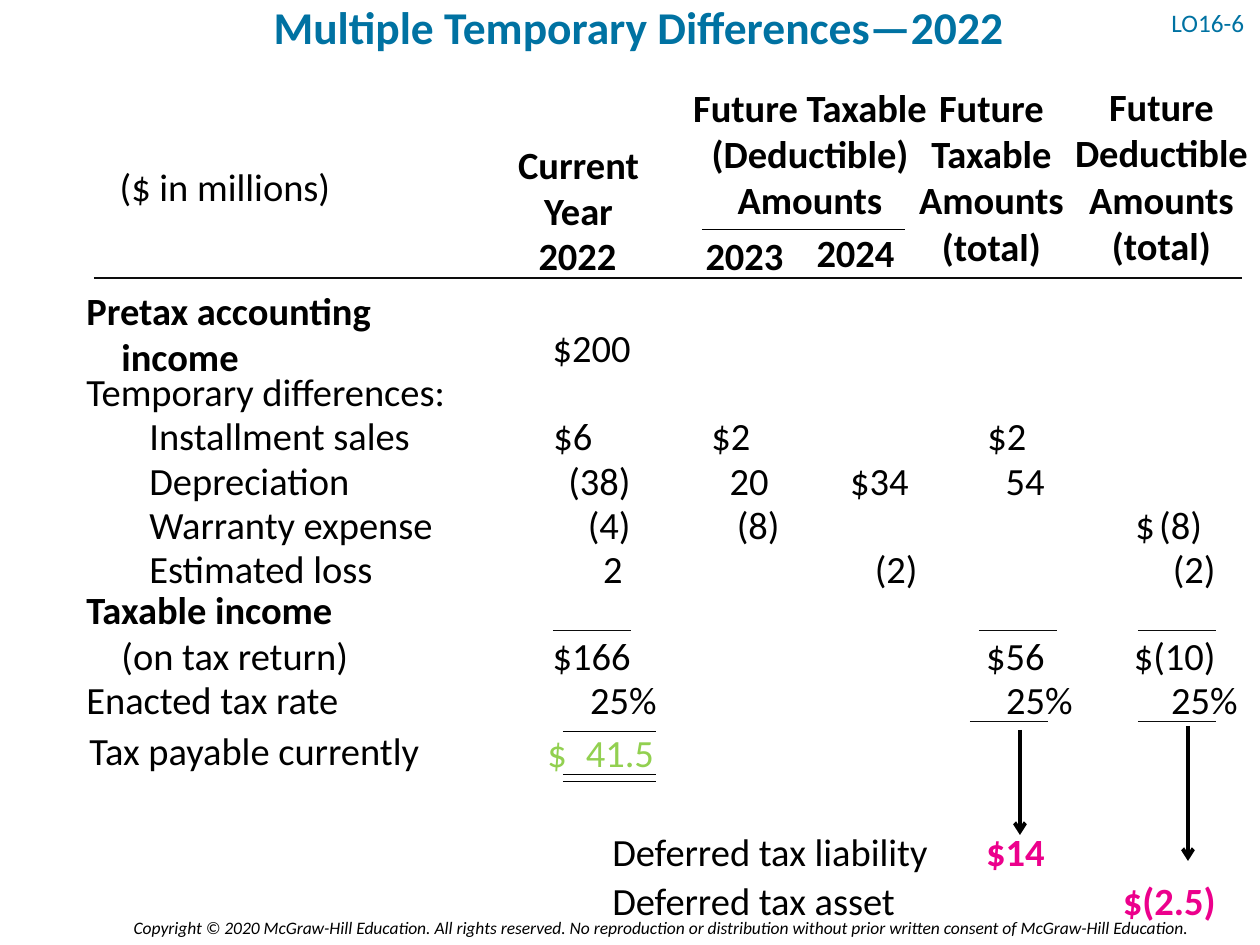
from pptx import Presentation
from pptx.dml.color import RGBColor
from pptx.enum.shapes import MSO_CONNECTOR
from pptx.enum.text import MSO_ANCHOR as ANCHOR, MSO_AUTO_SIZE as AUTO, PP_ALIGN as ALIGN
from pptx.oxml.ns import qn
from pptx.util import Emu, Pt
from lxml.etree import SubElement

PX = 914400 // 126
FONT = "Calibri"
BLACK, RULE, BLUE, GREEN, PINK = "000000", "0D0D0D", "0072A2", "92D050", "EC008C"
ROW_H, AMOUNT_W = 59, 131

# Left edges of the amount columns
CURRENT, Y2023, Y2024, TAXABLE, DEDUCTIBLE = 512, 650, 790, 926, 1097
# Tops of the rows
PRETAX, SALES, DEPRECIATION, WARRANTY, LOSS = 318, 406, 451, 495, 539
INCOME, RATE, PAYABLE, LIABILITY, ASSET = 626, 670, 723, 822, 871

LABELS = [  # text, left, top, width, indent
    ("Temporary differences:", 74, 362, 407, 0),
    ("Installment sales", 74, SALES, 407, 63),
    ("Depreciation", 74, DEPRECIATION, 407, 63),
    ("Warranty expense", 74, WARRANTY, 407, 63),
    ("Estimated loss", 74, LOSS, 407, 63),
    ("Enacted tax rate", 74, RATE, 407, 0),
    ("Tax payable currently", 14, 721, 437, 63),
    ("Deferred tax liability", 600, LIABILITY, 365, 0),
    ("Deferred tax asset", 600, ASSET, 365, 0),
]

AMOUNTS = [  # text, column, row, shift to the right
    ("$200", CURRENT, PRETAX, 0),
    ("(38)", CURRENT, DEPRECIATION, 0),
    ("(4)", CURRENT, WARRANTY, 0),
    ("2", CURRENT, LOSS, -8),
    ("$166", CURRENT, INCOME, 0),
    ("25%", CURRENT, RATE, 26),
    ("20", Y2023, DEPRECIATION, 0),
    ("(8)", Y2023, WARRANTY, 11),
    ("$34", Y2024, DEPRECIATION, 0),
    ("(2)", Y2024, LOSS, 9),
    ("54", TAXABLE, DEPRECIATION, 0),
    ("$56", TAXABLE, INCOME, 0),
    ("25%", TAXABLE, RATE, 28),
    ("$(10)", DEDUCTIBLE, INCOME, 0),
    ("(2)", DEDUCTIBLE, LOSS, 0),
    ("25%", DEDUCTIBLE, RATE, 22),
]

SPACED_AMOUNTS = [  # number, left, top, width, indent of the dollar sign, colour
    ("6", 500, SALES, AMOUNT_W, 41, BLACK),
    ("2", Y2023, SALES, AMOUNT_W, 49, BLACK),
    ("2", TAXABLE, SALES, AMOUNT_W, 49, BLACK),
    ("(8)", DEDUCTIBLE, WARRANTY, AMOUNT_W, 26, BLACK),
    ("41.5", 515, PAYABLE, 159, 20, GREEN),
]

HEADINGS = [  # lines, left, top, width, height
    (["Current Year"], 493, 135, 171, 105),
    (["2022"], CURRENT, 226, AMOUNT_W, ROW_H),
    (["2023"], 679, 226, AMOUNT_W, ROW_H),
    (["2024"], Y2024, 223, AMOUNT_W, ROW_H),
    (["Future Taxable (Deductible)", "Amounts"], 679, 78, 262, 153),
    (["Future Taxable", "Amounts (total)"], 902, 78, 179, 203),
    (["Future Deductible", "Amounts (total)"], 1062, 77, 199, 203),
]

RULES = [  # left, right, y, colour, weight
    (94, 1242, 278, RULE, 1.5),
    (702, 905, 229, BLACK, 0.5),
    (553, 631, 631, RULE, 0.5),
    (979, 1057, 631, RULE, 0.5),
    (1138, 1216, 631, RULE, 0.5),
    (970, 1048, 721, RULE, 0.5),
    (1138, 1216, 721, RULE, 0.5),
    (563, 656, 731, BLACK, 0.5),
    (563, 656, 774, BLACK, 0.5),
    (563, 656, 782, BLACK, 0.5),
]


def px(n):
    return Emu(n * PX)


def rgb(color):
    return RGBColor.from_string(color)


def set_tab(p, position):
    tabs = SubElement(p._p.get_or_add_pPr(), qn("a:tabLst"))
    SubElement(tabs, qn("a:tab"), pos=str(px(position)), algn="r")


def add_text(slide, lines, x, y, w, h=ROW_H, size=22, color=BLACK, bold=(), italic=False,
             align=ALIGN.LEFT, indents=(), anchor=ANCHOR.TOP, spacing=None, tab=None):
    """Add a box with one paragraph per line; bold and indents run along the lines."""
    tf = slide.shapes.add_textbox(px(x), px(y), px(w), px(h)).text_frame
    tf.word_wrap = True
    tf.vertical_anchor = anchor
    tf.auto_size = AUTO.NONE
    for i, line in enumerate(lines):
        p = tf.paragraphs[0] if i == 0 else tf.add_paragraph()
        p.alignment = align
        if spacing:
            p.line_spacing = spacing
        if indents and indents[i]:
            p._p.get_or_add_pPr().set("marL", str(px(indents[i])))
        if tab:
            set_tab(p, tab)
        r = p.add_run()
        r.text = line
        font = r.font
        font.name, font.size, font.italic = FONT, Pt(size), italic
        font.bold = bold[i] if bold else False
        font.color.rgb = rgb(color)
    return tf


def add_amount(slide, text, x, y, **style):
    add_text(slide, [text], x, y, AMOUNT_W, align=ALIGN.RIGHT, **style)


def add_spaced_amount(slide, number, x, y, w, indent, color):
    """Set the dollar sign at an indent and the number against the right edge."""
    tf = add_text(slide, ["$\t" + number], x, y, w, color=color,
                  indents=[indent], tab=w - 26)
    tf.margin_right = 0


def add_line(slide, x1, y1, x2, y2, color=BLACK, weight=0.5, arrow=False):
    line = slide.shapes.add_connector(MSO_CONNECTOR.STRAIGHT, px(x1), px(y1), px(x2), px(y2))
    line.line.color.rgb = rgb(color)
    line.line.width = Pt(weight)
    if arrow:
        SubElement(line.line._get_or_add_ln(), qn("a:tailEnd"), type="arrow")
    SubElement(line._element.spPr, qn("a:effectLst"))


def main():
    prs = Presentation()
    prs.slide_width, prs.slide_height = px(1260), px(945)
    slide = prs.slides.add_slide(prs.slide_layouts[6])

    add_text(slide, ["Copyright © 2020 McGraw-Hill Education. All rights reserved. No reproduction or "
                     "distribution without prior written consent of McGraw-Hill Education."],
             57, 911, 1143, 34, size=10, italic=True, align=ALIGN.RIGHT)
    add_text(slide, ["LO16-6"], 1159, 1, 102, 50, size=14.4, color=BLUE,
             anchor=ANCHOR.MIDDLE, spacing=0.7)
    add_text(slide, ["Multiple Temporary Differences—2022"], 67, -2, 1144, 52, size=26,
             color=BLUE, bold=[True], align=ALIGN.CENTER, anchor=ANCHOR.MIDDLE, spacing=1.1)

    add_text(slide, ["($ in millions)"], 99, 157, 252, align=ALIGN.CENTER)
    for lines, x, y, w, h in HEADINGS:
        add_text(slide, lines, x, y, w, h, bold=[True] * len(lines), align=ALIGN.CENTER)

    add_text(slide, ["Pretax accounting", "income"], 74, 281, 407, 105,
             bold=[True, True], indents=[0, 35])
    add_text(slide, ["Taxable income", "(on tax return)"], 74, 580, 407, 105,
             bold=[True, False], indents=[0, 35])
    for text, x, y, w, indent in LABELS:
        add_text(slide, [text], x, y, w, indents=[indent])

    for text, column, row, shift in AMOUNTS:
        add_amount(slide, text, column + shift, row)
    for spaced in SPACED_AMOUNTS:
        add_spaced_amount(slide, *spaced)
    add_amount(slide, "$14", TAXABLE, LIABILITY, color=PINK, bold=[True])
    add_amount(slide, "$(2.5)", DEDUCTIBLE, ASSET, color=PINK, bold=[True])

    for left, right, y, color, weight in RULES:
        add_line(slide, left, y, right, y, color, weight)
    add_line(slide, 1020, 730, 1020, 835, weight=2.25, arrow=True)
    add_line(slide, 1188, 726, 1188, 861, weight=2.25, arrow=True)

    prs.save("out.pptx")


if __name__ == "__main__":
    main()
